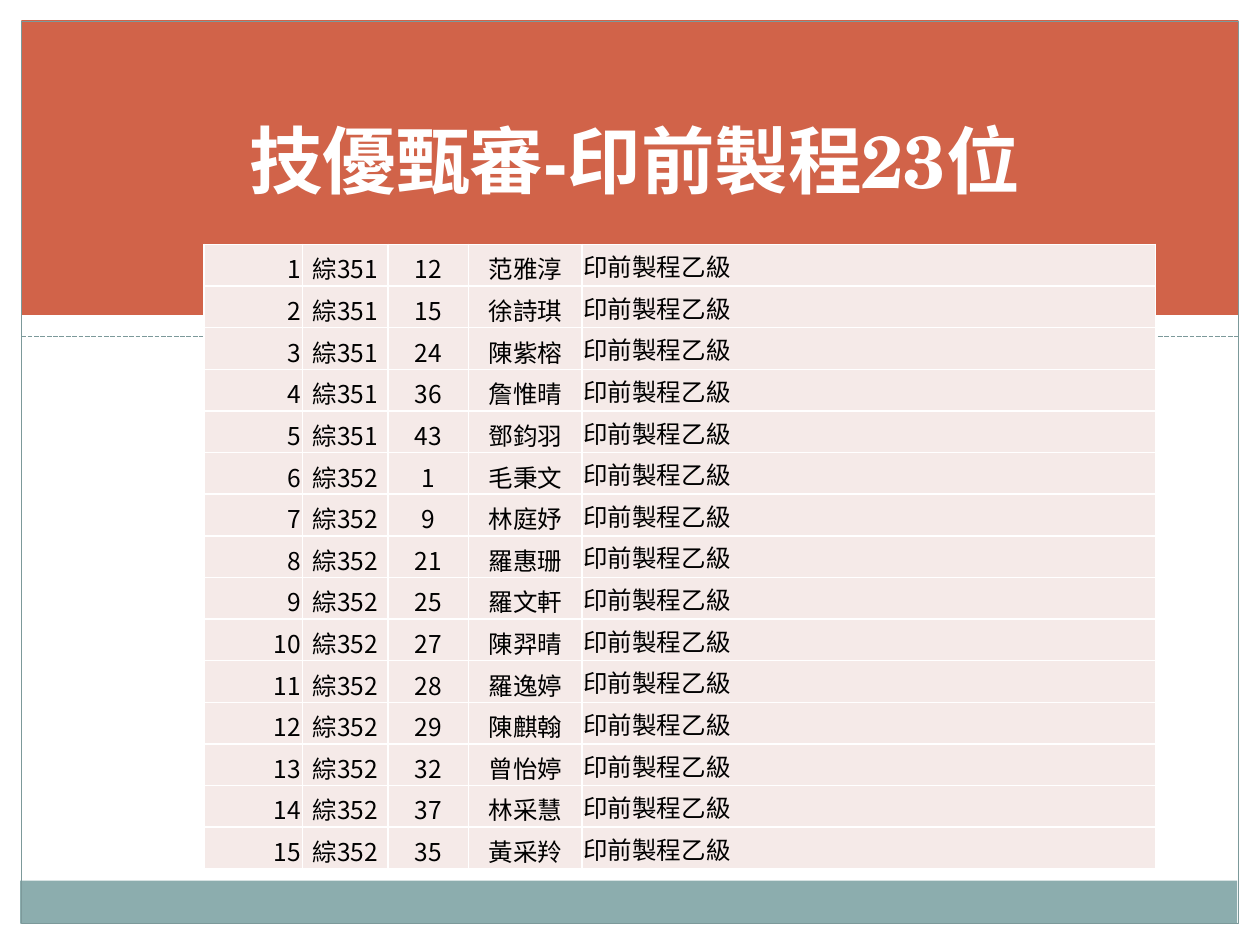
"""Build the slide listing students in the skills-based admission review."""
import pptx
import pptx.util
import pptx.dml.color
import pptx.enum.dml
import pptx.enum.shapes
import pptx.enum.text
import pptx.oxml
import pptx.oxml.ns

Inches, Pt = pptx.util.Inches, pptx.util.Pt
RGB = pptx.dml.color.RGBColor.from_string
ALIGN, ANCHOR = pptx.enum.text.PP_ALIGN, pptx.enum.text.MSO_ANCHOR
RECTANGLE = pptx.enum.shapes.MSO_SHAPE.RECTANGLE
COLORS = {"white": "FFFFFF", "black": "000000", "banner": "D16349",
          "footer": "8CADAE", "frame": "7C999A", "cell": "F5EAE8"}
CJK_FONT, TITLE_FONT = "Noto Sans CJK SC", "TeX Gyre Schola"
BORDER = ('<a:{} xmlns:a="http://schemas.openxmlformats.org/drawingml/2006/main" w="12700">'
          '<a:solidFill><a:srgbClr val="{}"/></a:solidFill></a:{}>')
MARGIN = 0.17
INNER_WIDTH = 10 - 2 * MARGIN


def add_panel(left, top, width, height, fill=None, line=None):
    panel = slide.shapes.add_shape(
        RECTANGLE, Inches(left), Inches(top), Inches(width), Inches(height))
    panel.shadow.inherit = False
    if fill:
        panel.fill.solid()
        panel.fill.fore_color.rgb = RGB(COLORS[fill])
    else:
        panel.fill.background()
    if line:
        panel.line.color.rgb = RGB(COLORS[line])
        panel.line.width = Pt(0.75)
    else:
        panel.line.fill.background()


def format_text(frame, font, size, color, align, bold=False):
    paragraph = frame.paragraphs[0]
    paragraph.alignment = align
    run = paragraph.runs[0]
    run.font.size, run.font.bold, run.font.name = Pt(size), bold, font
    run.font.color.rgb = RGB(COLORS[color])
    east_asian = pptx.oxml.parse_xml(
        f'<a:ea {pptx.oxml.ns.nsdecls("a")} typeface="{CJK_FONT}"/>')
    run.font._element.append(east_asian)


deck = pptx.Presentation()
deck.slide_width, deck.slide_height = Inches(10), Inches(7.5)
slide = deck.slides.add_slide(deck.slide_layouts[5])

add_panel(0, 7.5 - MARGIN, 10, MARGIN, fill="white")
add_panel(0, 0, 10, MARGIN, fill="white")
add_panel(10 - MARGIN, 0, MARGIN, 7.5, fill="white")
add_panel(MARGIN, 2.5, INNER_WIDTH, 0.33, fill="white")
add_panel(MARGIN, 0.16, INNER_WIDTH, 2.34, fill="banner")
add_panel(0.16, 6.99, INNER_WIDTH, 0.34, fill="footer")
add_panel(MARGIN, MARGIN, INNER_WIDTH, 7.5 - 2 * MARGIN, line="frame")

divider = slide.shapes.add_connector(
    pptx.enum.shapes.MSO_CONNECTOR.STRAIGHT,
    Inches(MARGIN), Inches(2.67), Inches(10 - MARGIN), Inches(2.67))
divider.line.color.rgb = RGB(COLORS["frame"])
divider.line.width = Pt(0.9)
divider.line.dash_style = pptx.enum.dml.MSO_LINE.SQUARE_DOT
divider._element.spPr.append(
    pptx.oxml.parse_xml(f'<a:effectLst {pptx.oxml.ns.nsdecls("a")}/>'))

title = slide.shapes.title
title.left, title.top = Inches(0.9), Inches(0.69)
title.width, title.height = Inches(8.27), Inches(0.97)
title.text_frame.text = "技優甄審-印前製程23位"
title.text_frame.vertical_anchor = ANCHOR.BOTTOM
title.text_frame.auto_size = pptx.enum.text.MSO_AUTO_SIZE.NONE
format_text(title.text_frame, TITLE_FONT, 42, "white", ALIGN.CENTER, bold=True)
slide.shapes._spTree.append(title._element)

classes = {
    "綜351": [(12, "范雅淳"), (15, "徐詩琪"), (24, "陳紫榕"), (36, "詹惟晴"), (43, "鄧鈞羽")],
    "綜352": [(1, "毛秉文"), (9, "林庭妤"), (21, "羅惠珊"), (25, "羅文軒"), (27, "陳羿晴"),
             (28, "羅逸婷"), (29, "陳麒翰"), (32, "曾怡婷"), (37, "林采慧"), (35, "黃采羚")],
}
students = [(group, seat, name) for group, members in classes.items() for seat, name in members]
column_widths = [0.78, 0.68, 0.64, 0.9, 4.55]
column_aligns = [ALIGN.RIGHT, ALIGN.CENTER, ALIGN.CENTER, ALIGN.CENTER, ALIGN.LEFT]

roster = slide.shapes.add_table(
    len(students), len(column_widths), Inches(1.62), Inches(1.94),
    Inches(sum(column_widths)), Inches(4.96)).table
roster.first_row = roster.horz_banding = False
for column, width in zip(roster.columns, column_widths):
    column.width = Inches(width)

for row, student in enumerate(students):
    roster.rows[row].height = Inches(4.96 / len(students))
    for col, value in enumerate((row + 1, *student, "印前製程乙級")):
        cell = roster.cell(row, col)
        cell.text_frame.text = str(value)
        format_text(cell.text_frame, CJK_FONT, 14, "black", column_aligns[col])
        cell.margin_left = cell.margin_right = cell.margin_top = Inches(0.01)
        cell.margin_bottom = 0
        cell.vertical_anchor = ANCHOR.MIDDLE if col == 4 else ANCHOR.BOTTOM
        cell.fill.solid()
        cell.fill.fore_color.rgb = RGB(COLORS["cell"])
        for position, side in enumerate(("lnL", "lnR", "lnT", "lnB")):
            border = pptx.oxml.parse_xml(BORDER.format(side, COLORS["white"], side))
            cell._tc.tcPr.insert(position, border)

deck.save("out.pptx")
